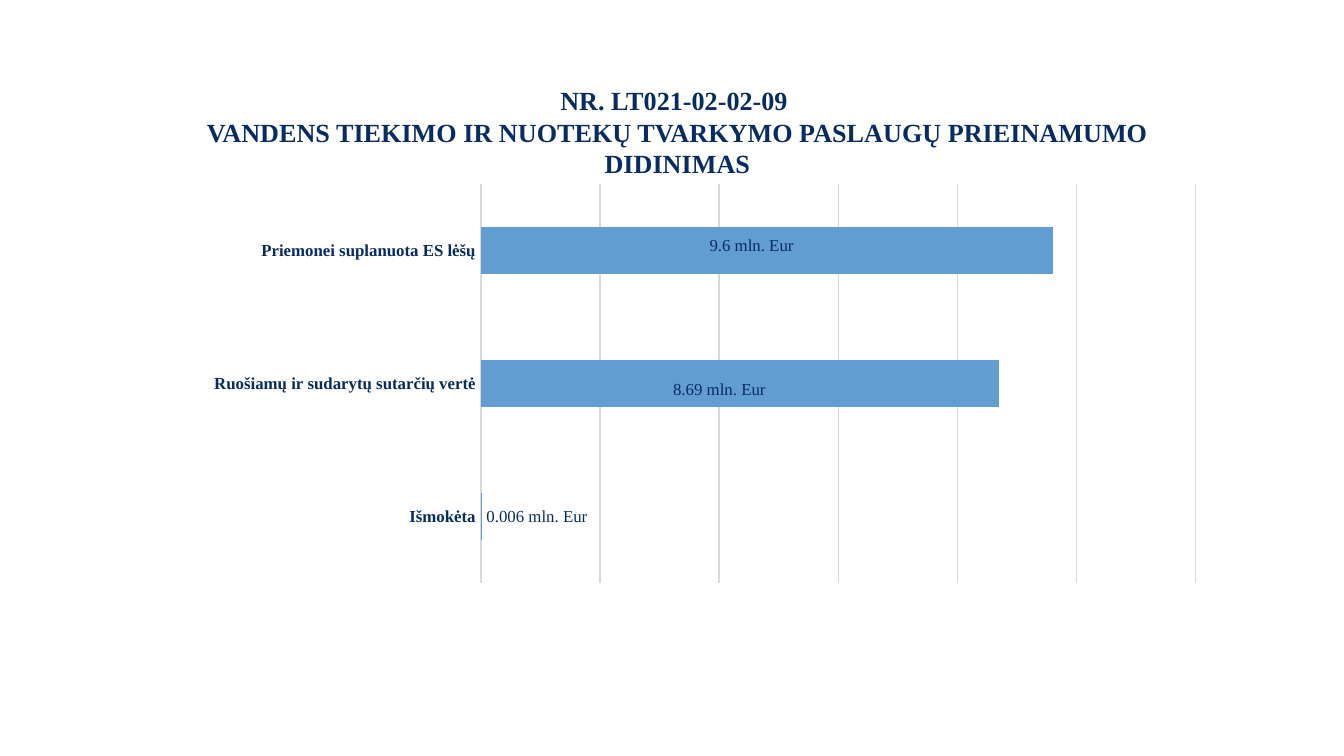
from lxml import etree
from pptx import Presentation
from pptx.chart.data import CategoryChartData
from pptx.dml.color import RGBColor
from pptx.enum import chart as ch, text as tx
from pptx.oxml import parse_xml
from pptx.oxml.ns import nsdecls
from pptx.util import Pt

TITLE = [
    "NR. LT021-02-02-09 ",
    "VANDENS TIEKIMO IR NUOTEKŲ TVARKYMO PASLAUGŲ PRIEINAMUMO DIDINIMAS",
]
POS = ch.XL_LABEL_POSITION
BARS = [
    ("Išmokėta", 0.006, POS.OUTSIDE_END, None),
    ("Ruošiamų ir sudarytų sutarčių vertė", 8.69, POS.CENTER, (-0.02, 0.015)),
    ("Priemonei suplanuota ES lėšų", 9.6, POS.CENTER, (-0.015, -0.012)),
]
THEME = {
    "font": "Times New Roman", "base": "League Spartan",
    "ink": "072C62", "bar": "629DD1", "grid": "D9D9D9", "black": "000000",
    "head": 14, "label": 9, "chart": 10,
}


def color(name):
    return RGBColor.from_string(THEME[name])


def style(font, size, bold=False, face="font", ink="ink"):
    font.name = THEME[face]
    font.size = Pt(THEME[size])
    font.bold = bold
    font.color.rgb = color(ink)


def write(frame, lines, size, bold=False, align=None):
    for i, line in enumerate(lines):
        para = frame.paragraphs[0] if i == 0 else frame.add_paragraph()
        para.alignment = align
        run = para.add_run()
        run.text = line
        style(run.font, size, bold)


def layout(**parts):
    node = parse_xml(f"<c:layout {nsdecls('c')}><c:manualLayout/></c:layout>")
    for tag, val in parts.items():
        item = etree.SubElement(node[0], node.tag.replace("layout", tag))
        item.set("val", str(val))
    return node


def rule(line):
    line.color.rgb = color("grid")
    line.width = Pt(0.75)


def add_bars(slide):
    data = CategoryChartData()
    data.categories = [bar[0] for bar in BARS]
    data.add_series("Series 1", [bar[1] for bar in BARS])
    chart = slide.shapes.add_chart(
        ch.XL_CHART_TYPE.BAR_CLUSTERED,
        Pt(104.4), Pt(94.3), Pt(547.2), Pt(222.5), data).chart
    chart.has_legend = chart.has_title = False
    style(chart.font, "chart", face="base", ink="black")

    area = chart.plots[0]._element.getparent()
    for old in area.findall("{*}layout"):
        area.remove(old)
    area.insert(0, layout(layoutTarget="inner", xMode="edge", yMode="edge",
                          x=0.28, y=0.02, w=0.7, h=0.96))

    cats, vals = chart.category_axis, chart.value_axis
    cats.major_tick_mark = ch.XL_TICK_MARK.NONE
    style(cats.tick_labels.font, "label", bold=True)
    rule(cats.format.line)
    vals.minimum_scale, vals.maximum_scale, vals.major_unit = 0, 12, 2
    vals.has_major_gridlines = True
    rule(vals.major_gridlines.format.line)
    vals.visible = False

    plot = chart.plots[0]
    plot.gap_width = 182
    plot.vary_by_categories = False
    series = plot.series[0]
    series.format.fill.solid()
    series.format.fill.fore_color.rgb = color("bar")
    labels = series.data_labels
    labels.show_value = True
    style(labels.font, "label", bold=True)
    for i, (_, val, pos, shift) in enumerate(BARS):
        label = series.points[i].data_label
        write(label.text_frame, [f"{val} mln. Eur"], "label")
        label.position = pos
        if shift:
            node = labels._element.findall("{*}dLbl")[i]
            node.insert(1, layout(x=shift[0], y=shift[1]))


def main():
    deck = Presentation()
    deck.slide_width, deck.slide_height = Pt(720), Pt(405)
    slide = deck.slides.add_slide(deck.slide_layouts[5])
    title = slide.shapes.title
    title.left, title.top = Pt(74.9), Pt(41.8)
    title.width, title.height = Pt(576), Pt(58.3)
    frame = title.text_frame
    frame.word_wrap = True
    frame.auto_size = tx.MSO_AUTO_SIZE.NONE
    frame.vertical_anchor = tx.MSO_ANCHOR.TOP
    write(frame, TITLE, "head", bold=True, align=tx.PP_ALIGN.CENTER)
    add_bars(slide)
    deck.save("out.pptx")


if __name__ == "__main__":
    main()
